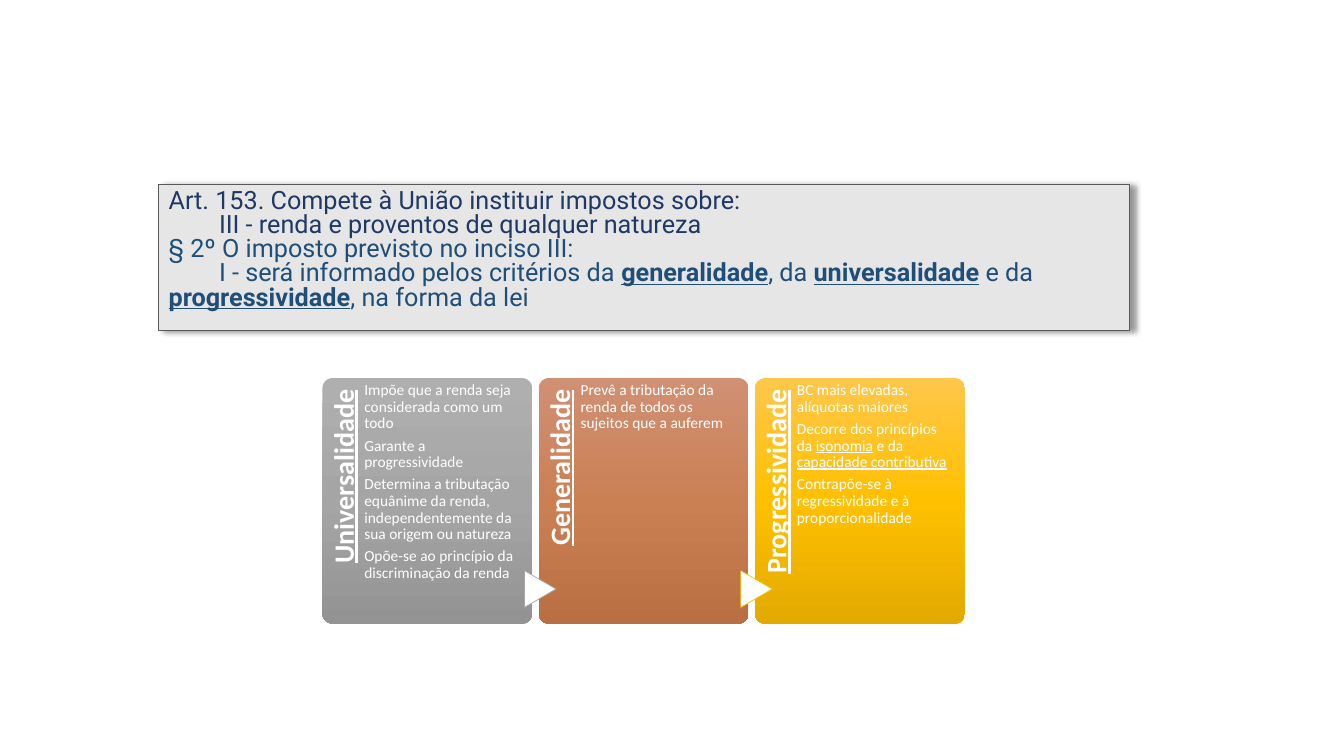
from copy import deepcopy
from dataclasses import dataclass
from lxml.etree import SubElement
from pptx import Presentation
from pptx.dml.color import RGBColor
from pptx.enum.shapes import MSO_SHAPE
from pptx.enum.text import MSO_ANCHOR, MSO_AUTO_SIZE, PP_ALIGN
from pptx.oxml.ns import qn
from pptx.util import Emu, Pt

LAW = [
    ("Art. 153. Compete à União instituir impostos sobre:", "203864"),
    ("\tIII - renda e proventos de qualquer natureza", "203864"),
    ("§ 2º O imposto previsto no inciso III:", "1F4E79"),
    ("\tI - será informado pelos critérios da _generalidade_, da _universalidade_"
     " e da _progressividade_, na forma da lei", "1F4E79"),
]
CRITERIA = [
    ("Universalidade", ("AFAFAF", "A5A5A5", "939393"), [
        "Impõe que a renda seja considerada como um todo",
        "Garante a progressividade",
        "Determina a tributação equânime da renda, independentemente da sua origem ou natureza",
        "Opõe-se ao princípio da discriminação da renda",
    ]),
    ("Generalidade", ("D09073", "CB8054", "BA6F42"), [
        "Prevê a tributação da renda de todos os sujeitos que a auferem",
    ]),
    ("Progressividade", ("FFC74B", "FFC000", "E3AA00"), [
        "BC mais elevadas, alíquotas maiores",
        "Decorre dos princípios da _isonomia_ e da _capacidade contributiva_",
        "Contrapõe-se à regressividade e à proporcionalidade",
    ]),
]
ARROW_LINES = ["A5A5A5", "FFC000"]


@dataclass(frozen=True)
class Theme:
    law_font: str = "Roboto"
    card_font: str = "Calibri"
    law_size: int = 18
    heading_size: int = 20
    point_size: int = 11
    panel: str = "E7E6E6"
    panel_line: str = "595959"
    white: str = "FFFFFF"
    shadow: str = "000000"


THEME = Theme()
PX = 9525
SLIDE = (1280, 720)
LAW_BOX = (151, 176, 925, 139)
CARD_LEFT, CARD_TOP, CARD_WIDTH, CARD_HEIGHT, CARD_GAP = 307, 360, 200, 234, 6
HEADING_LENGTH, HEADING_DEPTH = 192, 40
POINTS_WIDTH = 149
ARROW_WIDTH, ARROW_HEIGHT, ARROW_TOP = 35, 30, 546
TAB = 96


def px(*lengths):
    return [Emu(length * PX) for length in lengths]


def rgb(color):
    return RGBColor.from_string(color)


def write(paragraph, marked, font, size, color, bold=False, underline=False):
    for index, piece in enumerate(marked.split("_")):
        if not piece:
            continue
        run = paragraph.add_run()
        run.text = piece
        run.font.name = font
        run.font.size = Pt(size)
        run.font.color.rgb = rgb(color)
        run.font.bold = bold and (underline or index % 2 == 1)
        run.font.underline = underline or index % 2 == 1


def paragraphs(frame, count):
    return [frame.paragraphs[0]] + [frame.add_paragraph() for _ in range(count - 1)]


def add_law(slide):
    law = slide.placeholders[1]
    law.left, law.top, law.width, law.height = px(*LAW_BOX)
    law.fill.solid()
    law.fill.fore_color.rgb = rgb(THEME.panel)
    law.line.color.rgb = rgb(THEME.panel_line)
    law.line.width = Pt(0.75)
    properties = law._element.spPr
    effects = SubElement(properties, qn("a:effectLst"))
    shadow = SubElement(effects, qn("a:outerShdw"), blurRad=str(Pt(4)), dist=str(Pt(3)), dir="0")
    tint = SubElement(shadow, qn("a:srgbClr"), val=THEME.shadow)
    SubElement(tint, qn("a:alpha"), val="40000")
    frame = law.text_frame
    frame.word_wrap = True
    frame.auto_size = MSO_AUTO_SIZE.NONE
    frame.vertical_anchor = MSO_ANCHOR.TOP
    for paragraph, (clause, color) in zip(paragraphs(frame, len(LAW)), LAW):
        paragraph.line_spacing = 0.8
        paragraph.space_before = paragraph.space_after = Pt(0)
        layout = paragraph._p.get_or_add_pPr()
        layout.set("marL", "0")
        layout.set("indent", "0")
        SubElement(layout, qn("a:buNone"))
        tabs = SubElement(layout, qn("a:tabLst"))
        SubElement(tabs, qn("a:tab"), pos=str(TAB * PX), algn="l")
        write(paragraph, clause, THEME.law_font, THEME.law_size, color, bold=True)


def add_label(slide, box, insets):
    label = slide.shapes.add_textbox(*px(*box))
    frame = label.text_frame
    frame.word_wrap = True
    frame.margin_left, frame.margin_top, frame.margin_right, frame.margin_bottom = px(*insets)
    return label


def add_card(slide, left, heading, shades, points):
    card = slide.shapes.add_shape(MSO_SHAPE.ROUNDED_RECTANGLE,
                                  *px(left, CARD_TOP, CARD_WIDTH, CARD_HEIGHT))
    card.adjustments[0] = 0.05
    card.shadow.inherit = False
    card.line.fill.background()
    card.fill.gradient()
    card.fill.gradient_angle = 270
    stops = card._element.spPr.find(".//" + qn("a:gsLst"))
    stops.insert(1, deepcopy(stops[0]))
    for index, (stop, shade) in enumerate(zip(card.fill.gradient_stops, shades)):
        stop.position = index / 2
        stop.color.rgb = rgb(shade)

    title = add_label(slide, (left - 76, CARD_TOP + 77, HEADING_LENGTH, HEADING_DEPTH), (0, 7, 10, 0))
    title.rotation = 270
    line = title.text_frame.paragraphs[0]
    line.alignment = PP_ALIGN.RIGHT
    line.line_spacing = 0.9
    write(line, heading, THEME.card_font, THEME.heading_size, THEME.white, bold=True, underline=True)

    details = add_label(slide, (left + 40, CARD_TOP, POINTS_WIDTH, CARD_HEIGHT), (0, 4, 0, 0))
    for paragraph, point in zip(paragraphs(details.text_frame, len(points)), points):
        paragraph.line_spacing = 0.9
        paragraph.space_after = Pt(4)
        write(paragraph, point, THEME.card_font, THEME.point_size, THEME.white)


def add_arrow(slide, card_left, color):
    arrow = slide.shapes.add_shape(MSO_SHAPE.FLOWCHART_EXTRACT,
                                   *px(card_left - 16, ARROW_TOP, ARROW_WIDTH, ARROW_HEIGHT))
    arrow.rotation = 90
    arrow.shadow.inherit = False
    arrow.fill.solid()
    arrow.fill.fore_color.rgb = rgb(THEME.white)
    arrow.line.color.rgb = rgb(color)
    arrow.line.width = Pt(0.5)


def main():
    deck = Presentation()
    deck.slide_width, deck.slide_height = px(*SLIDE)
    slide = deck.slides.add_slide(deck.slide_layouts[1])
    empty_title = slide.shapes.title._element
    empty_title.getparent().remove(empty_title)
    add_law(slide)
    lefts = [CARD_LEFT + i * (CARD_WIDTH + CARD_GAP) for i in range(len(CRITERIA))]
    for left, criterion in zip(lefts, CRITERIA):
        add_card(slide, left, *criterion)
    for left, color in zip(lefts[1:], ARROW_LINES):
        add_arrow(slide, left, color)
    deck.save("out.pptx")


if __name__ == "__main__":
    main()
